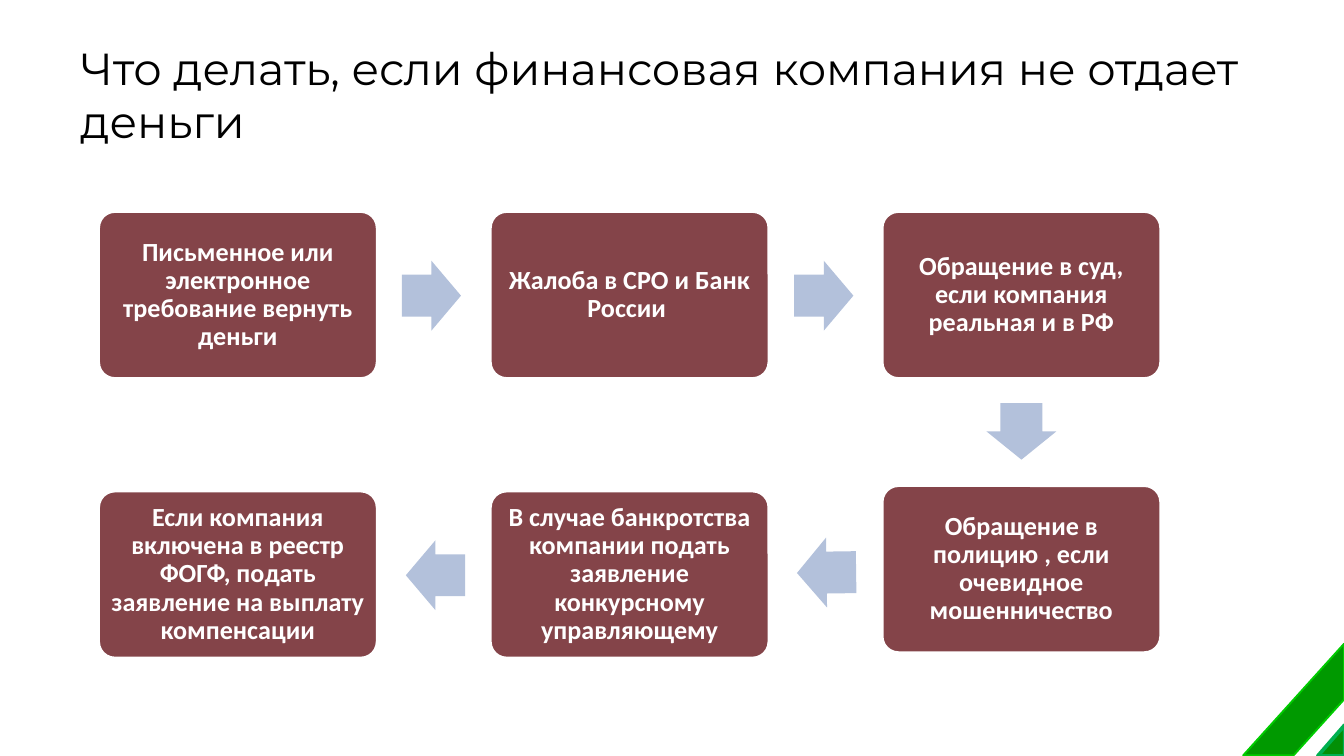
from pptx import Presentation
from pptx.dml.color import RGBColor
from pptx.enum.shapes import MSO_SHAPE
from pptx.enum.text import MSO_ANCHOR, PP_ALIGN
from pptx.util import Inches, Pt

COLORS = {
    "title": "000000",
    "step": "844449",
    "white": "FFFFFF",
    "arrow": "B3C1DB",
    "stripe": "009900",
    "stripe_edge": "00CC00",
    "corner": "038F06",
    "corner_edge": "00B050",
}
SLIDE_WIDTH = 10
SLIDE_HEIGHT = SLIDE_WIDTH * 9 / 16
TITLE = "Что делать, если финансовая компания не отдает деньги"
STEP_WIDTH, STEP_HEIGHT, STEP_PITCH = 2.08, 1.25, 2.915
# Text, column and top offset of each step, in reading order of the flow
STEPS = [
    ("Письменное или электронное требование вернуть деньги", 0, 0),
    ("Жалоба в СРО и Банк России ", 1, 0),
    ("Обращение в суд, если компания реальная и в РФ", 2, 0),
    ("Обращение в полицию , если очевидное мошенничество", 2, 2.04),
    ("В случае банкротства компании подать заявление конкурсному управляющему", 1, 2.08),
    ("Если компания включена в реестр ФОГФ, подать заявление на выплату компенсации", 0, 2.08),
]
# Left and top offset, width and rotation of each arrow
ARROWS = [
    (2.26, 0.37, 0.44, 0),
    (5.18, 0.37, 0.44, 0),
    (6.66, 1.38, 0.42, 90),
    (5.20, 2.43, 0.44, 179.2),
    (2.29, 2.45, 0.44, 180),
]


def color(name):
    return RGBColor.from_string(COLORS[name])


def add_filled(page, kind, box, fill, line=None, line_width=1, rotation=0):
    shape = page.shapes.add_shape(kind, *(Inches(length) for length in box))
    shape.shadow.inherit = False
    shape.rotation = rotation
    shape.fill.solid()
    shape.fill.fore_color.rgb = color(fill)
    if line:
        shape.line.color.rgb = color(line)
        shape.line.width = Pt(line_width)
    else:
        shape.line.fill.background()
    return shape


def write(shape, text, font, size, ink, margins, bold=False):
    frame = shape.text_frame
    frame.text = text
    frame.word_wrap = True
    frame.vertical_anchor = MSO_ANCHOR.MIDDLE
    frame.margin_left = frame.margin_right = Inches(margins[0])
    frame.margin_top = frame.margin_bottom = Inches(margins[1])
    para = frame.paragraphs[0]
    span = para.runs[0]
    span.font.name = font
    span.font.size = Pt(size)
    span.font.bold = bold
    span.font.color.rgb = color(ink)
    return para


def add_title(page, box):
    title = page.shapes.add_textbox(*(Inches(length) for length in box))
    write(title, TITLE, "Montserrat", 24, "title", (0.1, 0.05))


def add_step(page, box, text):
    step = add_filled(page, MSO_SHAPE.ROUNDED_RECTANGLE, box, "step", "white", 2)
    step.adjustments[0] = 0.1
    para = write(step, text, "Calibri", 14, "white", (0.05, 0.06), bold=True)
    para.alignment = PP_ALIGN.CENTER
    para.line_spacing = 0.9


def add_flow(page, left, top):
    for text, column, offset in STEPS:
        box = (left + column * STEP_PITCH, top + offset, STEP_WIDTH, STEP_HEIGHT)
        add_step(page, box, text)
    for across, down, width, rotation in ARROWS:
        box = (left + across, top + down, width, 0.52)
        arrow = add_filled(page, MSO_SHAPE.RIGHT_ARROW, box, "arrow", rotation=rotation)
        arrow.adjustments[0] = 0.6
        arrow.adjustments[1] = 0.5


def add_corner(page, left, top):
    add_filled(page, MSO_SHAPE.DIAGONAL_STRIPE, (left, top, 0.75, 0.83),
               "stripe", "stripe_edge", 1, 180)
    add_filled(page, MSO_SHAPE.RIGHT_TRIANGLE, (left + 0.54, top + 0.62, 0.23, 0.2),
               "corner", "corner_edge", 2, 270)


def main():
    deck = Presentation()
    deck.slide_width = Inches(SLIDE_WIDTH)
    deck.slide_height = Inches(SLIDE_HEIGHT)
    page = deck.slides.add_slide(deck.slide_layouts[6])
    add_title(page, (0.5, 0.23, 9, 0.94))
    add_flow(page, 0.73, 1.57)
    add_corner(page, 9.25, 4.79)
    deck.save("out.pptx")


if __name__ == "__main__":
    main()
